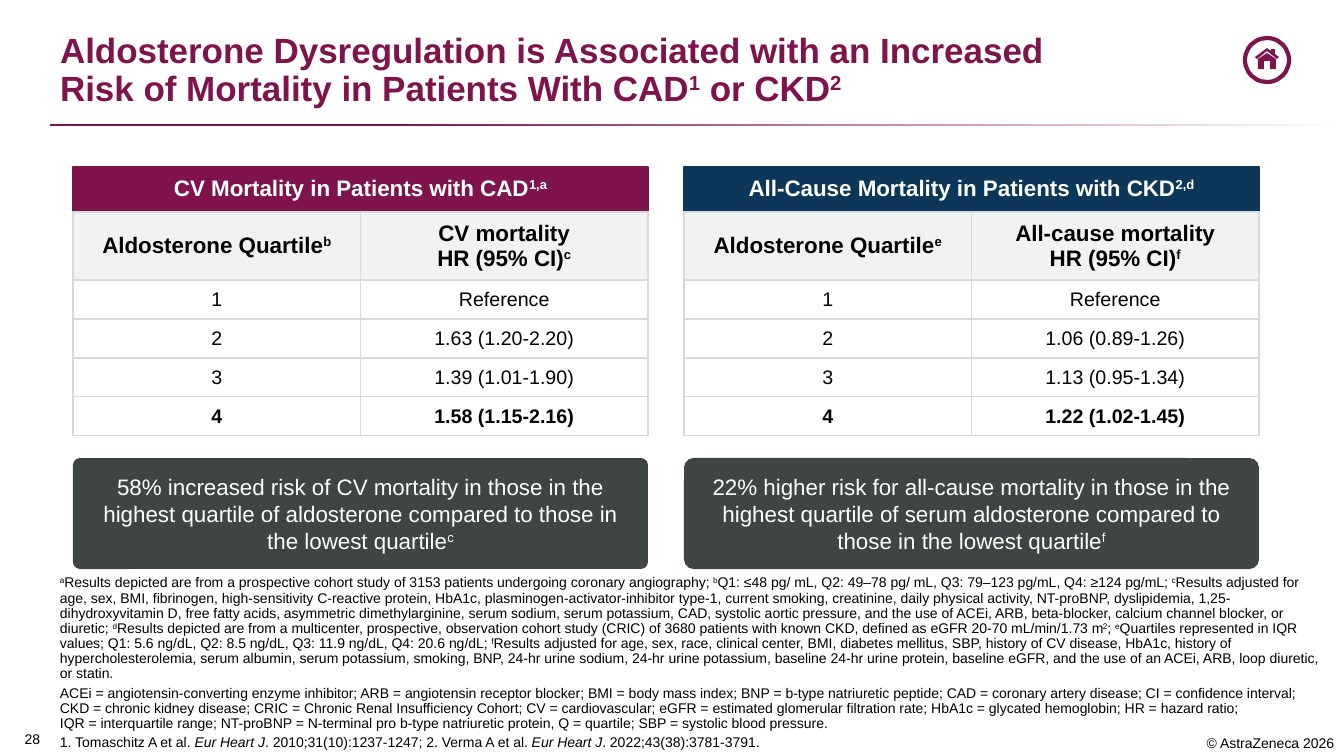
from lxml import etree
from pptx import Presentation
from pptx.dml.color import RGBColor
from pptx.enum.shapes import MSO_SHAPE as SHAPE
from pptx.enum.text import MSO_ANCHOR as ANCHOR, MSO_AUTO_SIZE as AUTO_SIZE, PP_ALIGN as ALIGN
from pptx.oxml.ns import qn
from pptx.util import Pt

PX = 914400 / 100.8  # EMU in one px
FONT = "Arial"
PLUM = RGBColor(0x7F, 0x13, 0x4C)
NAVY = RGBColor(0x0D, 0x37, 0x59)
SLATE = RGBColor(0x3F, 0x44, 0x44)
PALE = RGBColor(0xF2, 0xF2, 0xF2)
WHITE = RGBColor(0xFF, 0xFF, 0xFF)
BLACK = RGBColor(0x00, 0x00, 0x00)
BORDER = "D9D9D9"

# Panel geometry
PANEL_W = 575
HEADER_Y, HEADER_H = 167, 45
TABLE_Y, HEAD_ROW_H, ROW_H = 212, 68, 39
CALLOUT_Y, CALLOUT_H = 458, 111

# In all wording, ^ encloses superscripts and * encloses italics
TITLE = ("Aldosterone Dysregulation is Associated with an Increased\n"
         "Risk of Mortality in Patients With CAD^1^ or CKD^2^")
PANELS = [
    dict(x=73, color=PLUM, radius=0.063,
         header="CV Mortality in Patients with CAD^1,a^",
         heads=[["Aldosterone Quartile^b^"], ["CV mortality", "HR (95% CI)^c^"]],
         ratios=["Reference", "1.63 (1.20-2.20)", "1.39 (1.01-1.90)", "1.58 (1.15-2.16)"],
         callout="58% increased risk of CV mortality in those in the highest quartile "
                 "of aldosterone compared to those in the lowest quartile^c^"),
    dict(x=684, color=NAVY, radius=0.086,
         header="All-Cause Mortality in Patients with CKD^2,d^",
         heads=[["Aldosterone Quartile^e^"], ["All-cause mortality", "HR (95% CI)^f^"]],
         ratios=["Reference", "1.06 (0.89-1.26)", "1.13 (0.95-1.34)", "1.22 (1.02-1.45)"],
         callout="22% higher risk for all-cause mortality in those in the highest quartile "
                 "of serum aldosterone compared to those in the lowest quartile^f^"),
]
STUDY_NOTES = [
    "^a^Results depicted are from a prospective cohort study of 3153 patients undergoing "
    "coronary angiography",
    "^b^Q1: ≤48 pg/ mL, Q2: 49–78 pg/ mL, Q3: 79–123 pg/mL, Q4: ≥124 pg/mL",
    "^c^Results adjusted for age, sex, BMI, fibrinogen, high-sensitivity "
    "C-reactive protein, HbA1c, plasminogen-activator-inhibitor type-1, current smoking, "
    "creatinine, daily physical activity, NT-proBNP, dyslipidemia, 1,25-dihydroxyvitamin D, "
    "free fatty acids, asymmetric dimethylarginine, serum sodium, serum potassium, CAD, "
    "systolic aortic pressure, and the use of ACEi, ARB, beta-blocker, calcium channel "
    "blocker, or diuretic",
    "^d^Results depicted are from a multicenter, prospective, observation cohort study (CRIC) "
    "of 3680 patients with known CKD, defined as eGFR 20-70 mL/min/1.73 m^2^",
    "^e^Quartiles represented in IQR values; Q1: 5.6 ng/dL, Q2: 8.5 ng/dL, Q3: 11.9 ng/dL, "
    "Q4: 20.6 ng/dL",
    "^f^Results adjusted for age, sex, race, clinical center, BMI, diabetes mellitus, SBP, "
    "history of CV disease, HbA1c, history of hypercholesterolemia, serum albumin, "
    "serum potassium, smoking, BNP, 24-hr urine sodium, 24-hr urine potassium, baseline "
    "24-hr urine protein, baseline eGFR, and the use of an ACEi, ARB, loop diuretic, or statin.",
]
FOOTNOTES = [
    "; ".join(STUDY_NOTES),
    "ACEi = angiotensin-converting enzyme inhibitor; ARB = angiotensin receptor blocker; "
    "BMI = body mass index; BNP = b-type natriuretic peptide; CAD = coronary artery disease; "
    "CI = confidence interval; \n"
    "CKD = chronic kidney disease; CRIC = Chronic Renal Insufficiency Cohort; "
    "CV = cardiovascular; eGFR = estimated glomerular filtration rate; "
    "HbA1c = glycated hemoglobin; HR = hazard ratio; \n"
    "IQR = interquartile range; NT-proBNP = N-terminal pro b-type natriuretic protein, "
    "Q = quartile; SBP = systolic blood pressure.",
    "1. Tomaschitz A et al. *Eur Heart J*. 2010;31(10):1237-1247; "
    "2. Verma A et al. *Eur Heart J*. 2022;43(38):3781-3791.",
]

# Home icon outlines, in px
ROOF = [(1267, 48), (1255, 57), (1257, 59), (1267, 51), (1277, 59), (1279, 57),
        (1275, 54), (1275, 49), (1271, 49), (1271, 51)]
HOUSE = [(1267, 53), (1258, 59), (1258, 69), (1264, 69), (1264, 61),
         (1270, 61), (1270, 69), (1276, 69), (1276, 59)]


def px(*lengths):
    return [round(n * PX) for n in lengths]


def add_runs(p, text, size, color, bold):
    for i, chunk in enumerate(text.split("^")):
        for j, piece in enumerate(chunk.split("*")):
            for k, line in enumerate(piece.split("\n")):
                if k:
                    p.add_line_break()
                if not line:
                    continue
                r = p.add_run()
                r.text = line
                r.font.name, r.font.size, r.font.bold = FONT, Pt(size), bold
                r.font.color.rgb = color
                if j % 2:
                    r.font.italic = True
                if i % 2:
                    r.font._element.set("baseline", "30000")


def write(tf, paragraphs, size, color, align=ALIGN.CENTER, bold=False, spacing=None, before=0):
    for i, text in enumerate(paragraphs):
        p = tf.add_paragraph() if i else tf.paragraphs[0]
        p.alignment = align
        if spacing:
            p.line_spacing = spacing
        if i and before:
            p.space_before = Pt(before)
        add_runs(p, text, size, color, bold)


def add_text(s, box, paragraphs, align, anchor, **style):
    tf = s.shapes.add_textbox(*px(*box)).text_frame
    tf.word_wrap = True
    tf.vertical_anchor = anchor
    write(tf, paragraphs, 10, BLACK, align, **style)
    return tf


def paint(sp, fill, line=None, width=1):
    sp.shadow.inherit = False
    sp.fill.solid()
    sp.fill.fore_color.rgb = fill
    if line is None:
        sp.line.fill.background()
    else:
        sp.line.color.rgb = line
        sp.line.width = Pt(width)


def add_box(s, kind, box, fill, text, line=None, **style):
    sp = s.shapes.add_shape(kind, *px(*box))
    paint(sp, fill, line)
    sp.text_frame.word_wrap = True
    sp.text_frame.vertical_anchor = ANCHOR.MIDDLE
    write(sp.text_frame, [text], 16, WHITE, **style)
    return sp


def add_outline(s, points):
    builder = s.shapes.build_freeform(*points[0], scale=PX)
    builder.add_line_segments(points[1:], close=True)
    paint(builder.convert_to_shape(), PLUM)


def fill_cell(cell, paragraphs, size, fill, bold):
    cell.vertical_anchor = ANCHOR.MIDDLE
    write(cell.text_frame, paragraphs, size, BLACK, bold=bold)
    tc_pr = cell._tc.get_or_add_tcPr()
    for side in ("lnL", "lnR", "lnT", "lnB"):
        ln = etree.SubElement(tc_pr, qn("a:" + side), w=str(Pt(1)))
        solid = etree.SubElement(ln, qn("a:solidFill"))
        etree.SubElement(solid, qn("a:srgbClr"), val=BORDER)
    cell.fill.solid()
    cell.fill.fore_color.rgb = fill


def add_quartile_table(s, x, heads, ratios):
    height = HEAD_ROW_H + ROW_H * len(ratios)
    table = s.shapes.add_table(len(ratios) + 1, 2, *px(x, TABLE_Y, PANEL_W, height)).table
    table.first_row = table.horz_banding = False
    table.rows[0].height = px(HEAD_ROW_H)[0]
    for col, head in enumerate(heads):
        fill_cell(table.cell(0, col), head, 16, PALE, True)
    for quartile, ratio in enumerate(ratios, 1):
        table.rows[quartile].height = px(ROW_H)[0]
        for col, text in enumerate((str(quartile), ratio)):
            fill_cell(table.cell(quartile, col), [text], 14, WHITE, quartile == len(ratios))


def add_panel(s, x, color, radius, header, heads, ratios, callout):
    sp = add_box(s, SHAPE.RECTANGLE, (x, HEADER_Y, PANEL_W, HEADER_H), color, header,
                 line=color, bold=True, spacing=0.9)
    sp.text_frame.margin_left = sp.text_frame.margin_right = px(20)[0]
    add_quartile_table(s, x, heads, ratios)
    sp = add_box(s, SHAPE.ROUNDED_RECTANGLE, (x, CALLOUT_Y, PANEL_W, CALLOUT_H), SLATE, callout)
    sp.adjustments[0] = radius


def add_title(s):
    sp = s.shapes.title
    sp.left, sp.top, sp.width, sp.height = px(50, 25, 1243, 89)
    tf = sp.text_frame
    tf.auto_size = AUTO_SIZE.NONE
    tf.vertical_anchor = ANCHOR.BOTTOM
    write(tf, [TITLE], 25, PLUM, ALIGN.LEFT, bold=True, spacing=0.9)


def add_fading_rule(s):
    sp = s.shapes.add_shape(SHAPE.RECTANGLE, *px(50, 124, 1294, 2))
    paint(sp, PLUM)
    sp.fill.gradient()
    sp.fill.gradient_angle = 0
    for stop, position, color in zip(sp.fill.gradient_stops, (0.26, 1), (PLUM, WHITE)):
        stop.position = position
        stop.color.rgb = color


def main():
    prs = Presentation()
    prs.slide_width, prs.slide_height = px(1344, 756)
    s = prs.slides.add_slide(prs.slide_layouts[5])

    # Heading and home icon
    add_title(s)
    add_fading_rule(s)
    paint(s.shapes.add_shape(SHAPE.OVAL, *px(1245, 38, 44, 44)), WHITE, PLUM, 3)
    add_outline(s, ROOF)
    add_outline(s, HOUSE)

    # Mortality panels
    for panel in PANELS:
        add_panel(s, **panel)

    # Footnotes, slide number and copyright
    add_text(s, (50, 584, 1279, 172), FOOTNOTES, ALIGN.LEFT, ANCHOR.BOTTOM, spacing=0.9, before=3)
    tf = add_text(s, (0, 716, 50, 40), ["28"], ALIGN.RIGHT, ANCHOR.MIDDLE)
    tf.margin_bottom = 0
    add_text(s, (1120, 729, 224, 27), ["© AstraZeneca 2026"], ALIGN.RIGHT, ANCHOR.BOTTOM)

    prs.save("out.pptx")


if __name__ == "__main__":
    main()
